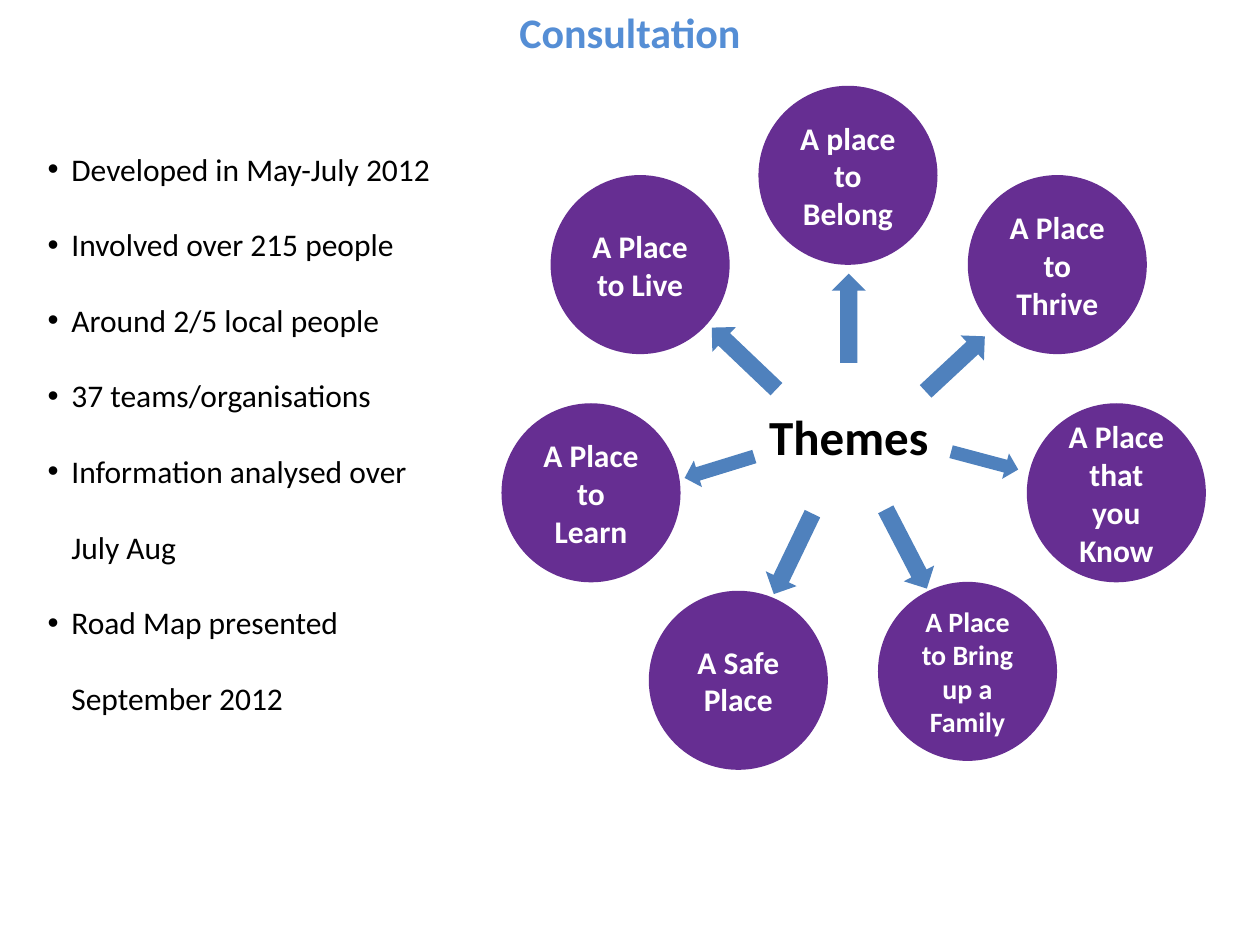
from lxml.etree import SubElement
from pptx import Presentation
from pptx.dml.color import RGBColor
from pptx.enum.shapes import MSO_SHAPE
from pptx.enum.text import MSO_ANCHOR, PP_ALIGN
from pptx.oxml.ns import qn
from pptx.util import Cm, Pt

PURPLE = RGBColor(0x66, 0x2E, 0x92)
BLUE = RGBColor(0x4F, 0x81, 0xBD)
SKY = RGBColor(0x55, 0x8E, 0xD5)
WHITE = RGBColor(0xFF, 0xFF, 0xFF)
BLACK = RGBColor(0, 0, 0)

DISC = 3.61
THEMES = [
    ("A place to Belong", 15.29, 1.73, 18),
    ("A Place to Thrive", 19.51, 3.53, 18),
    ("A Place that you Know", 20.7, 8.13, 18),
    ("A Place to Bring up a Family", 17.7, 11.73, 16),
    ("A Safe Place", 13.08, 11.91, 18),
    ("A Place to Learn", 10.11, 8.13, 18),
    ("A Place to Live", 11.1, 3.53, 18),
]
ARROWS = [
    (16.21, 6.07, 1.8, 0.69, 90),
    (18.44, 6.99, 1.63, 0.69, 137.1),
    (19.15, 9.02, 1.4, 0.53, 194.9),
    (17.37, 10.72, 1.8, 0.69, 242.6),
    (15.09, 10.82, 1.8, 0.69, 295.7),
    (13.77, 9.14, 1.47, 0.56, 342.9),
    (14.1, 6.88, 1.8, 0.69, 43.6),
]
FACTS = [
    "Developed in May-July 2012",
    "Involved over 215 people",
    "Around 2/5 local people",
    "37 teams/organisations",
    "Information analysed over July Aug",
    "Road Map presented September 2012",
]


def write(frame, lines, font="Calibri", size=18, color=BLACK, bold=False,
          align=PP_ALIGN.CENTER, anchor=MSO_ANCHOR.TOP, space=None, bullet=None):
    frame.word_wrap = True
    frame.vertical_anchor = anchor
    for i, line in enumerate(lines):
        para = frame.paragraphs[0] if i == 0 else frame.add_paragraph()
        para.alignment = align
        if space:
            para.line_spacing = space
        run = para.add_run()
        run.text = line
        run.font.name = font
        run.font.size = Pt(size)
        run.font.bold = bold
        run.font.color.rgb = color
        if bullet:
            props = para._p.get_or_add_pPr()
            props.set("marL", str(Cm(0.48)))
            props.set("indent", str(-Cm(0.48)))
            SubElement(props, qn("a:buFont"), typeface="Arial")
            SubElement(props, qn("a:buChar"), char=bullet)


class Deck:
    disc_fill = PURPLE
    arrow_fill = BLUE

    def __init__(self, width, height):
        self.file = Presentation()
        self.file.slide_width = Cm(width)
        self.file.slide_height = Cm(height)
        self.slide = self.file.slides.add_slide(self.file.slide_layouts[5])

    def title(self, text, x, y, w, h):
        head = self.slide.shapes.title
        head.left, head.top, head.width, head.height = map(Cm, (x, y, w, h))
        write(head.text_frame, [text], size=24, color=SKY, bold=True)

    def shape(self, kind, x, y, w, h, fill):
        form = self.slide.shapes.add_shape(kind, *map(Cm, (x, y, w, h)))
        form.shadow.inherit = False
        form.fill.solid()
        form.fill.fore_color.rgb = fill
        form.line.fill.background()
        return form

    def disc(self, text, x, y, size):
        form = self.shape(MSO_SHAPE.OVAL, x, y, DISC, DISC, self.disc_fill)
        write(form.text_frame, [text], size=size, color=WHITE, bold=True,
              anchor=MSO_ANCHOR.MIDDLE)

    def arrow(self, x, y, w, h, turn):
        form = self.shape(MSO_SHAPE.LEFT_ARROW, x, y, w, h, self.arrow_fill)
        form.rotation = turn

    def text(self, lines, x, y, w, h, **style):
        box = self.slide.shapes.add_textbox(*map(Cm, (x, y, w, h)))
        write(box.text_frame, lines, **style)


def main():
    deck = Deck(25.4, 19.05)
    deck.title("Consultation", 0, 0, 25.4, 1.27)
    for theme in THEMES:
        deck.disc(*theme)
    for arrow in ARROWS:
        deck.arrow(*arrow)
    deck.text(["Themes"], 14.71, 8.08, 4.8, 1.45, size=28, bold=True)
    deck.text(FACTS, 0.71, 2.13, 8.61, 12.57, align=PP_ALIGN.LEFT,
              space=2.0, bullet="•")
    deck.file.save("out.pptx")


if __name__ == "__main__":
    main()
